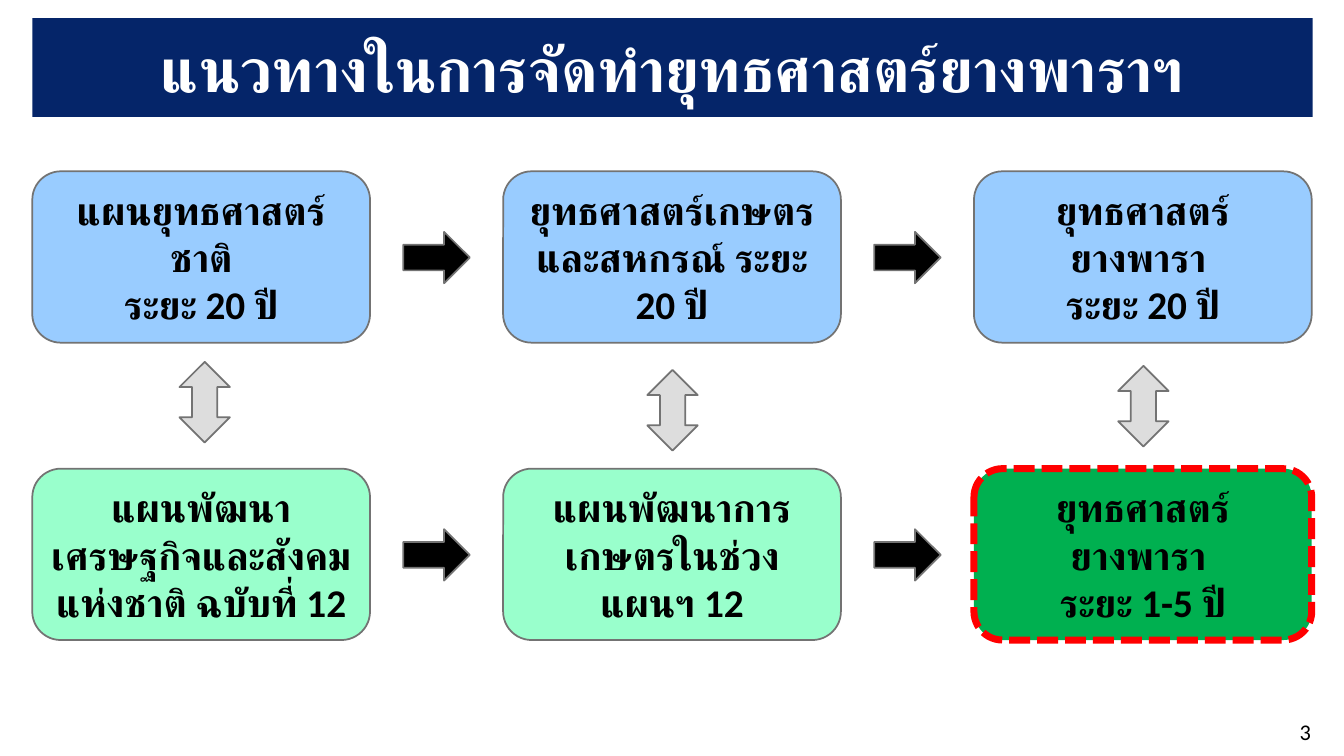
import pptx
import pptx.dml.color
import pptx.enum.dml
import pptx.enum.shapes
import pptx.enum.text
import pptx.oxml.ns
import pptx.util
import lxml.etree

Inches = pptx.util.Inches
SHAPE = pptx.enum.shapes.MSO_SHAPE
ALIGN = pptx.enum.text.PP_ALIGN

COLORS = {
    "navy": "052569", "white": "FFFFFF", "black": "000000",
    "blue": "99CCFF", "mint": "99FFCC", "green": "00B050",
    "gray": "DDDDDD", "outline": "737373", "red": "FF0000",
}


def rgb(name):
    return pptx.dml.color.RGBColor.from_string(COLORS[name])


class SlideBuilder:
    font = "Calibri"

    def __init__(self, prs):
        self.slide = prs.slides.add_slide(prs.slide_layouts[5])

    def add_text(self, sp, lines, size, color="black", bold=True, align=ALIGN.CENTER):
        tf = sp.text_frame
        frame_format = {
            "word_wrap": True,
            "auto_size": pptx.enum.text.MSO_AUTO_SIZE.NONE,
            "vertical_anchor": pptx.enum.text.MSO_ANCHOR.MIDDLE,
        }
        for name, value in frame_format.items():
            setattr(tf, name, value)
        run_format = {"size": pptx.util.Pt(size), "bold": bold, "name": self.font}
        for i, line in enumerate(lines):
            p = tf.add_paragraph() if i else tf.paragraphs[0]
            p.alignment = align
            r = p.add_run()
            r.text = line
            for name, value in run_format.items():
                setattr(r.font, name, value)
            r.font.color.rgb = rgb(color)
            # Thai text takes its typeface from the complex-script font
            cs = lxml.etree.SubElement(r.font._element, pptx.oxml.ns.qn("a:cs"))
            cs.set("typeface", self.font)

    def title(self, text, left, top, width, height):
        sp = self.slide.shapes.title
        place = {"left": left, "top": top, "width": width, "height": height}
        for name, value in place.items():
            setattr(sp, name, Inches(value))
        sp.fill.solid()
        sp.fill.fore_color.rgb = rgb("navy")
        self.add_text(sp, [text], 44, "white")

    def shape(self, kind, left, top, width, height, fill, line="outline", weight=1.25):
        sp = self.slide.shapes.add_shape(
            kind, Inches(left), Inches(top), Inches(width), Inches(height))
        sp.shadow.inherit = False
        sp.fill.solid()
        sp.fill.fore_color.rgb = rgb(fill)
        sp.line.color.rgb = rgb(line)
        sp.line.width = pptx.util.Pt(weight)
        return sp

    def plan_box(self, left, top, lines, fill, highlight=False):
        border = {"line": "red", "weight": 5} if highlight else {}
        sp = self.shape(SHAPE.ROUNDED_RECTANGLE, left, top, 3.35, 1.7, fill, **border)
        if highlight:
            sp.line.dash_style = pptx.enum.dml.MSO_LINE.SQUARE_DOT
        self.add_text(sp, lines, 28)

    def next_arrow(self, left, top):
        self.shape(SHAPE.RIGHT_ARROW, left, top, 0.66, 0.51, "black")

    def link_arrow(self, left, top):
        """Add a vertical double arrow, placed by its box before rotation."""
        sp = self.shape(SHAPE.LEFT_RIGHT_ARROW, left, top, 0.8, 0.5, "gray")
        sp.rotation = 90

    def page_number(self, text):
        sp = self.slide.shapes.add_textbox(
            Inches(11.67), Inches(7.06), Inches(1.43), Inches(0.4))
        self.add_text(sp, [text], 16, bold=False, align=ALIGN.RIGHT)


def main():
    prs = pptx.Presentation()
    prs.slide_width, prs.slide_height = Inches(13.33), Inches(7.5)
    s = SlideBuilder(prs)
    s.title("แนวทางในการจัดทำยุทธศาสตร์ยางพาราฯ", 0.32, 0.18, 12.7, 0.98)

    left, pitch = 0.32, 4.67
    rows = [
        (1.7, "blue", [
            ["แผนยุทธศาสตร์ชาติ", "ระยะ 20 ปี"],
            ["ยุทธศาสตร์เกษตรและสหกรณ์ ระยะ 20 ปี"],
            ["ยุทธศาสตร์ยางพารา ", "ระยะ 20 ปี"],
        ]),
        (4.65, "mint", [
            ["แผนพัฒนาเศรษฐกิจและสังคมแห่งชาติ ฉบับที่ 12"],
            ["แผนพัฒนาการเกษตรในช่วงแผนฯ 12"],
            ["ยุทธศาสตร์ยางพารา ", "ระยะ 1-5 ปี"],
        ]),
    ]
    for top, fill, plans in rows:
        for col, lines in enumerate(plans):
            x = left + col * pitch
            highlight = fill == "mint" and col == 2
            s.plan_box(x, top, lines, "green" if highlight else fill, highlight)
            if col < 2:
                s.next_arrow(x + 3.68, top + 0.6)

    for x, y in [(1.63, 3.74), (6.27, 3.82), (10.94, 3.78)]:
        s.link_arrow(x, y)
    s.page_number("3")
    prs.save("out.pptx")


if __name__ == "__main__":
    main()
